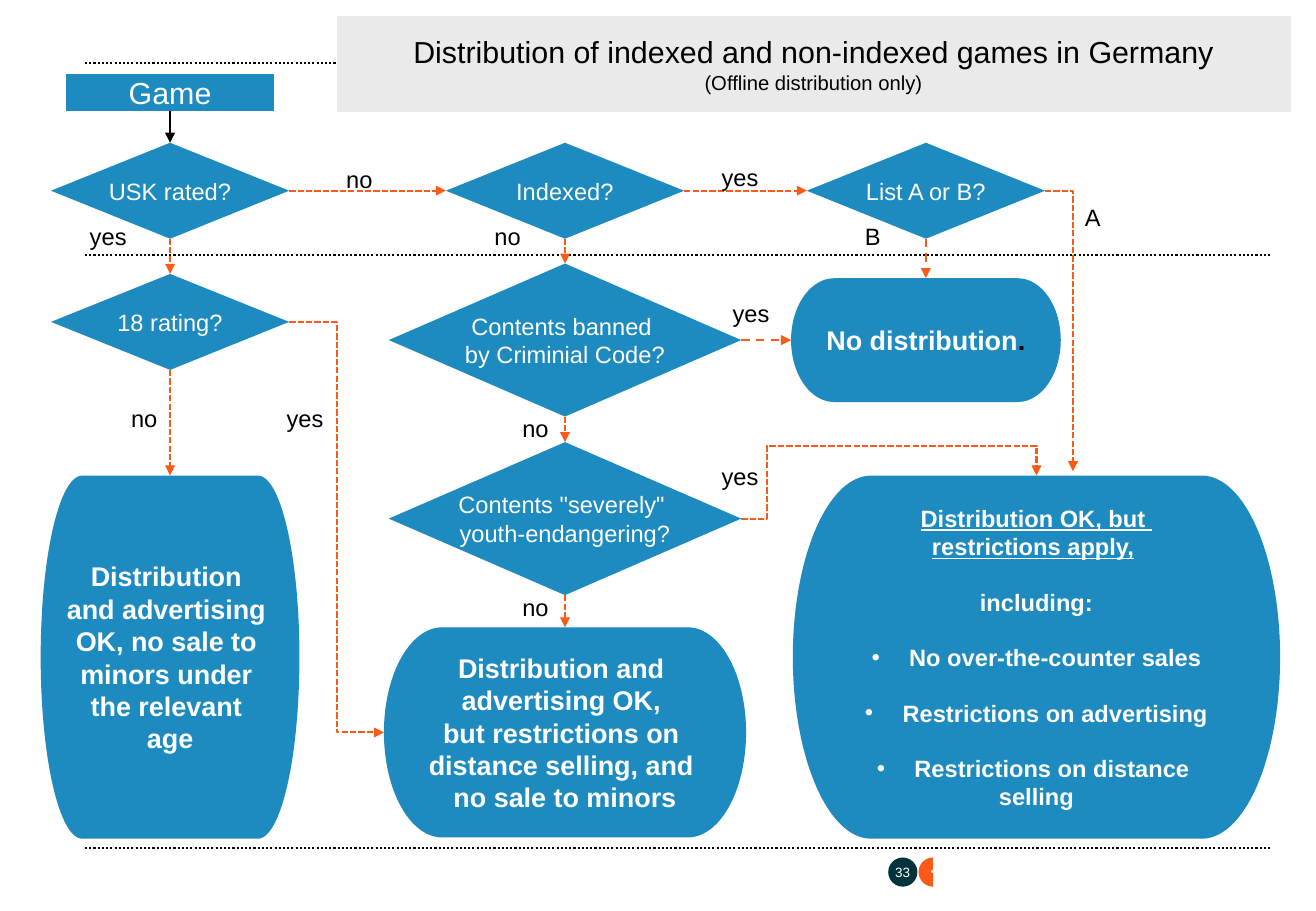
import math

import pptx
import pptx.dml.color
import pptx.enum.dml
import pptx.enum.shapes
import pptx.enum.text
import pptx.oxml.ns
import pptx.util
from lxml import etree

SHAPE = pptx.enum.shapes.MSO_SHAPE
LINK = pptx.enum.shapes.MSO_CONNECTOR
DASH = pptx.enum.dml.MSO_LINE
ALIGN = pptx.enum.text.PP_ALIGN
qn = pptx.oxml.ns.qn

THEME = {
    "font": "Arial", "blue": "1D8BBF", "orange": "FB5A17", "navy": "00333B",
    "grey": "EAEAEA", "black": "000000", "white": "FFFFFF",
    "title": 18, "outcome": 16, "body": 14, "subtitle": 12, "number": 8,
    "line": 1.25, "thin": 0.75, "gap": 16.1, "indent": 0.31,
}
WIDTH, HEIGHT = 10.83, 7.5

# Column centres, row centres and shape sizes of the flow chart, in inches
COLS = {"left": 1.4, "mid": 4.65, "right": 7.62, "wide": 8.53}
ROWS = {"start": 0.76, "first": 1.57, "rating": 2.65, "banned": 2.8,
        "severe": 4.27, "tall": 5.41, "low": 6.03}
SIZES = {"start": (1.71, 0.31), "small": (1.96, 0.79), "large": (2.9, 1.26),
         "stop": (2.22, 1.02), "ok": (2.13, 2.99), "limited": (2.98, 1.73),
         "restricted": (4.01, 2.99)}
RULES = (0.52, 2.1, 6.98)
RULE_ENDS = (0.7, 10.46)
TITLE_BOX = (2.77, 0.13, 7.85, 0.79)
NUMBER_BOX = (7.31, 7.06, 0.24, 0.24)

TITLE = [
    [("Distribution of indexed and non-indexed games in Germany", {})],
    [("(Offline distribution only)", {"size": "subtitle"})],
]
UNDER = {"underline": True}

# name: (column, row, size, shape, text size, paragraphs)
NODES = {
    "game": ("left", "start", "start", SHAPE.FLOWCHART_PROCESS, "title", ["Game"]),
    "indexed": ("mid", "first", "small", SHAPE.FLOWCHART_DECISION, "body", ["Indexed?"]),
    "list": ("right", "first", "small", SHAPE.FLOWCHART_DECISION, "body", ["List A or B?"]),
    "rated": ("left", "first", "small", SHAPE.FLOWCHART_DECISION, "body", ["USK rated?"]),
    "banned": ("mid", "banned", "large", SHAPE.FLOWCHART_DECISION, "body",
               ["Contents banned ", "by Criminial Code?"]),
    "severe": ("mid", "severe", "large", SHAPE.FLOWCHART_DECISION, "body",
               ['Contents "severely" ', "youth-endangering?"]),
    "stop": ("right", "banned", "stop", SHAPE.FLOWCHART_TERMINATOR, "outcome",
             [[("No distribution", {}), (".", {"color": "black"})]]),
    "restricted": ("wide", "tall", "restricted", SHAPE.FLOWCHART_TERMINATOR, "body", [
        [("Distribution OK, but ", UNDER)],
        [("restrictions apply,", UNDER), (" ", {})],
        "+including:", "*No over-the-counter sales", "*Restrictions on advertising",
        "*Restrictions on distance ", "selling"]),
    "ok": ("left", "tall", "ok", SHAPE.FLOWCHART_TERMINATOR, "outcome",
           ["Distribution ", "and advertising ", "OK, no sale to ",
            "minors under ", "the relevant ", "age"]),
    "limited": ("mid", "low", "limited", SHAPE.FLOWCHART_TERMINATOR, "outcome",
                ["Distribution and ", "advertising OK, ", "but restrictions on ",
                 "distance selling, and ", "no sale to minors"]),
    "rating": ("left", "rating", "small", SHAPE.FLOWCHART_DECISION, "body", ["18 rating?"]),
}

TOP, LEFT, BOTTOM, RIGHT = range(4)
# from, side, to, side, dash
STRAIGHT = [
    ("game", BOTTOM, "rated", TOP, None),
    ("rated", BOTTOM, "rating", TOP, DASH.SQUARE_DOT),
    ("rating", BOTTOM, "ok", TOP, DASH.SQUARE_DOT),
    ("rated", RIGHT, "indexed", LEFT, DASH.SQUARE_DOT),
    ("indexed", RIGHT, "list", LEFT, DASH.SQUARE_DOT),
    ("list", BOTTOM, "stop", TOP, DASH.DASH),
    ("indexed", BOTTOM, "banned", TOP, DASH.SQUARE_DOT),
    ("banned", BOTTOM, "severe", TOP, DASH.SQUARE_DOT),
    ("severe", BOTTOM, "limited", TOP, DASH.SQUARE_DOT),
    ("banned", RIGHT, "stop", LEFT, DASH.DASH),
]
# from, to, side, free end, preset, adjustments
BENT = [
    ("list", None, None, (8.83, 3.88), "bentConnector2", ()),
    ("severe", "restricted", TOP, (8.53, 3.91), "bentConnector4", (8700, 168900)),
    ("rating", "limited", LEFT, (3.15, 6.03), "bentConnector3", (50000,)),
]
LABEL_WIDTHS = {"no": 0.42, "yes": 0.51, "A": 0.33, "B": 0.33}
LABEL_HEIGHT = 0.34
LABELS = [
    ("no", 2.75, 1.31), ("yes", 5.84, 1.29), ("no", 0.98, 3.28), ("no", 3.97, 1.78),
    ("no", 4.2, 3.36), ("no", 4.2, 4.83), ("A", 8.83, 1.62), ("B", 7.02, 1.78),
    ("yes", 0.64, 1.78), ("yes", 2.26, 3.28), ("yes", 5.84, 3.75), ("yes", 5.93, 2.41),
]


def inches(*values):
    return [pptx.util.Inches(v) for v in values]


def rgb(name):
    return pptx.dml.color.RGBColor.from_string(THEME[name])


def add_bullet(p):
    pPr = p._p.get_or_add_pPr()
    indent = pptx.util.Inches(THEME["indent"])
    pPr.set("marL", str(indent))
    pPr.set("indent", str(-indent))
    etree.SubElement(pPr, qn("a:buFont")).set("typeface", THEME["font"])
    etree.SubElement(pPr, qn("a:buChar")).set("char", "•")


def write(tf, paragraphs, size, color, bold=False, align=ALIGN.CENTER):
    """A leading + asks for a gap above; a leading * for a gap and a bullet."""
    for i, content in enumerate(paragraphs):
        p = tf.paragraphs[0] if i == 0 else tf.add_paragraph()
        p.alignment = align
        if isinstance(content, str):
            mark = content[0]
            if mark in "+*":
                p.space_before = pptx.util.Pt(THEME["gap"])
            if mark == "*":
                add_bullet(p)
            content = [(content.lstrip("+*"), {})]
        for text, change in content:
            look = {"size": size, "color": color, "underline": None, **change}
            r = p.add_run()
            r.text = text
            r.font.color.rgb = rgb(look["color"])
            form = {"name": THEME["font"], "size": pptx.util.Pt(THEME[look["size"]]),
                    "bold": bold, "underline": look["underline"]}
            for key, value in form.items():
                setattr(r.font, key, value)


def paint(sp, fill):
    sp.shadow.inherit = False
    sp.fill.solid()
    sp.fill.fore_color.rgb = rgb(fill)
    sp.line.fill.background()


def add_box(s, kind, box, fill, paragraphs, size, color, bold=False):
    sp = s.shapes.add_shape(kind, *inches(*box))
    paint(sp, fill)
    tf = sp.text_frame
    tf.word_wrap = False
    tf.vertical_anchor = pptx.enum.text.MSO_ANCHOR.MIDDLE
    write(tf, paragraphs, size, color, bold)
    return sp


def add_line(s, kind, start, end, color, width, dash, arrow=True):
    cn = s.shapes.add_connector(kind, *inches(*start, *end))
    cn.line.color.rgb = rgb(color)
    cn.line.width = pptx.util.Pt(THEME[width])
    if dash:
        cn.line.dash_style = dash
    if arrow:
        etree.SubElement(cn.line._get_or_add_ln(), qn("a:tailEnd")).set("type", "triangle")
    etree.SubElement(cn._element.spPr, qn("a:effectLst"))
    return cn


def set_bend(cn, preset, adjustments):
    geom = cn._element.spPr.find(qn("a:prstGeom"))
    geom.set("prst", preset)
    for old in list(geom):
        geom.remove(old)
    guides = etree.SubElement(geom, qn("a:avLst"))
    for i, value in enumerate(adjustments, 1):
        gd = etree.SubElement(guides, qn("a:gd"))
        gd.set("name", f"adj{i}")
        gd.set("fmla", f"val {value}")


def add_half_disc(s):
    x, y, r = 7.68, 7.18, 0.12
    arc = [(x - r * math.sin(a), y - r * math.cos(a))
           for a in (math.pi * i / 24 for i in range(25))]
    notch = [(x, y + 0.01), (x - 0.02, y), (x - 0.02, y - 0.01), (x, y - 0.02)]
    points = [inches(*point) for point in arc + notch]
    fb = s.shapes.build_freeform(*points[0])
    fb.add_line_segments(points[1:], close=True)
    paint(fb.convert_to_shape(), "orange")


def main():
    prs = pptx.Presentation()
    prs.slide_width, prs.slide_height = inches(WIDTH, HEIGHT)
    s = prs.slides.add_slide(prs.slide_layouts[6])

    for y in RULES:
        add_line(s, LINK.STRAIGHT, (RULE_ENDS[0], y), (RULE_ENDS[1], y),
                 "black", "line", DASH.ROUND_DOT, arrow=False)

    nodes = {}
    for name, (col, row, size, kind, text_size, paragraphs) in NODES.items():
        w, h = SIZES[size]
        box = (COLS[col] - w / 2, ROWS[row] - h / 2, w, h)
        nodes[name] = add_box(s, kind, box, "blue", paragraphs, text_size, "white",
                              bold=kind == SHAPE.FLOWCHART_TERMINATOR)

    for source, side, target, end_side, dash in STRAIGHT:
        color, width = ("orange", "line") if dash else ("black", "thin")
        cn = add_line(s, LINK.STRAIGHT, (0, 0), (1, 1), color, width, dash)
        cn.begin_connect(nodes[source], side)
        cn.end_connect(nodes[target], end_side)

    for source, target, side, end, preset, adjustments in BENT:
        cn = add_line(s, LINK.ELBOW, (0, 0), end, "orange", "line", DASH.SQUARE_DOT)
        cn.begin_connect(nodes[source], RIGHT)
        if target:
            cn.end_connect(nodes[target], side)
        set_bend(cn, preset, adjustments)

    add_box(s, SHAPE.FLOWCHART_PROCESS, TITLE_BOX, "grey", TITLE, "title", "black")
    for text, x, y in LABELS:
        tf = s.shapes.add_textbox(*inches(x, y, LABEL_WIDTHS[text], LABEL_HEIGHT)).text_frame
        tf.word_wrap = False
        tf.auto_size = pptx.enum.text.MSO_AUTO_SIZE.SHAPE_TO_FIT_TEXT
        write(tf, [text], "body", "black", align=ALIGN.LEFT)

    number = add_box(s, SHAPE.OVAL, NUMBER_BOX, "navy", ["33"], "number", "white")
    for margin in ("margin_left", "margin_top", "margin_right", "margin_bottom"):
        setattr(number.text_frame, margin, 0)
    add_half_disc(s)
    prs.save("out.pptx")


if __name__ == "__main__":
    main()
